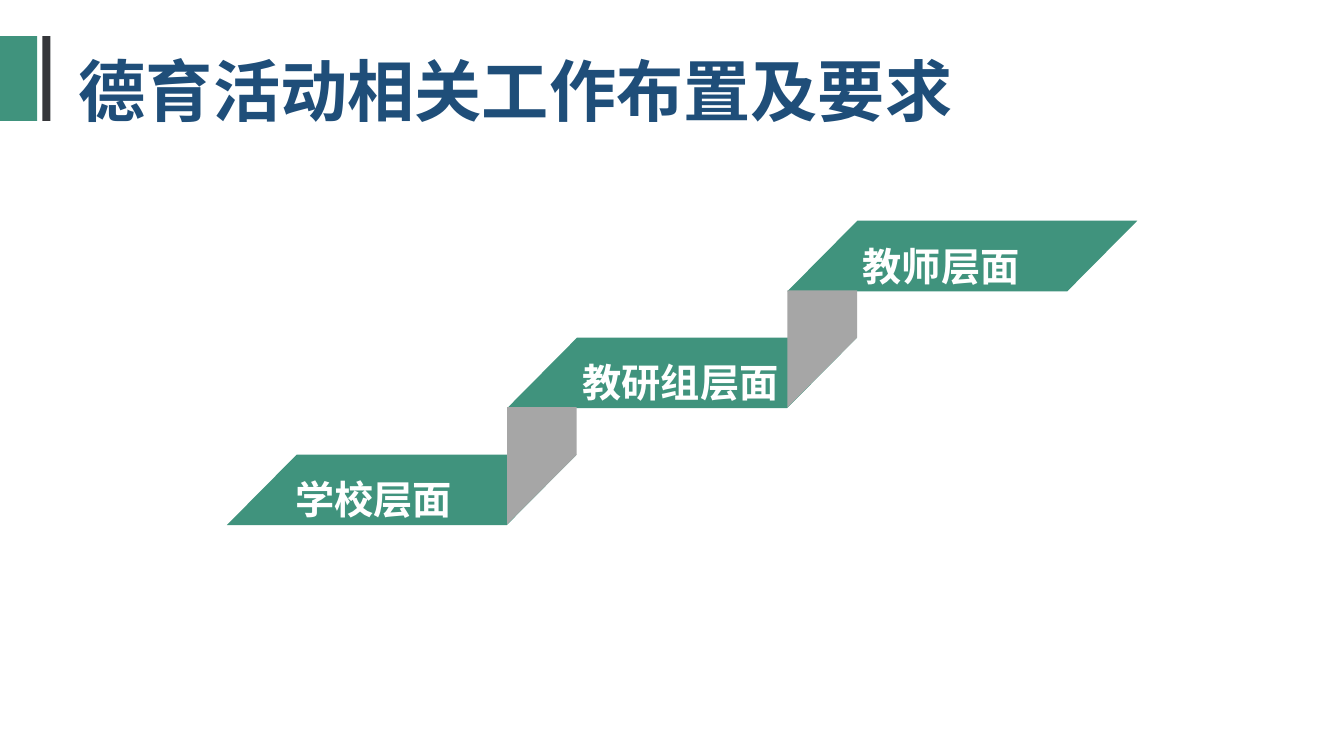
from dataclasses import dataclass

from lxml.etree import SubElement
from pptx import Presentation
from pptx.dml.color import RGBColor
from pptx.enum.shapes import MSO_SHAPE
from pptx.enum.text import MSO_ANCHOR, MSO_AUTO_SIZE, PP_ALIGN
from pptx.oxml.ns import qn
from pptx.util import Inches, Pt

FACE = "Noto Sans CJK SC"
GREEN, GREY, DARK, NAVY, WHITE = "40937D", "A6A6A6", "35363A", "1F4E79", "FFFFFF"
LEFT, TOP = 2.25, 4.51
RUN, RISE = 2.78, 1.16
WIDE, HIGH, SLANT = 3.47, 0.7, 0.69


@dataclass
class Step:
    text: str
    inset: float
    width: float


@dataclass
class Bar:
    left: float
    width: float
    color: str


STEPS = [
    Step("学校层面", 0.58, 1.76),
    Step("教研组层面", 0.65, 2.14),
    Step("教师层面", 0.65, 1.76),
]
BARS = [Bar(0, 0.37, GREEN), Bar(0.42, 0.08, DARK)]


def paint(shape, color: str) -> None:
    shape.shadow.inherit = False
    shape.fill.solid()
    shape.fill.fore_color.rgb = RGBColor.from_string(color)
    shape.line.fill.background()


def block(slide, kind: MSO_SHAPE, box: tuple, color: str) -> None:
    paint(slide.shapes.add_shape(kind, *map(Inches, box)), color)


def riser(slide, left: float, top: float) -> None:
    low = top + RISE
    points = [(left, top), (left + SLANT, top), (left + SLANT, low - SLANT)]
    form = slide.shapes.build_freeform(Inches(left), Inches(low), scale=1.0)
    form.add_line_segments([(Inches(x), Inches(y)) for x, y in points], close=True)
    paint(form.convert_to_shape(), GREY)


def write(shape, text: str, size: int, color: str) -> None:
    frame = shape.text_frame
    frame.text = text
    layout = {
        "word_wrap": False,
        "auto_size": MSO_AUTO_SIZE.SHAPE_TO_FIT_TEXT,
        "vertical_anchor": MSO_ANCHOR.TOP,
    }
    for name, value in layout.items():
        setattr(frame, name, value)
    line = frame.paragraphs[0]
    line.alignment = PP_ALIGN.LEFT
    run = line.runs[0]
    for name, value in {"name": FACE, "size": Pt(size), "bold": True}.items():
        setattr(run.font, name, value)
    run.font.color.rgb = RGBColor.from_string(color)
    SubElement(run._r.get_or_add_rPr(), qn("a:ea"), typeface=FACE)


def main() -> None:
    deck = Presentation()
    deck.slide_width, deck.slide_height = Inches(13.33), Inches(7.5)
    slide = deck.slides.add_slide(deck.slide_layouts[5])

    title = slide.shapes.title
    place = {"left": 0.68, "top": 0.44, "width": 8.87, "height": 0.91}
    for name, value in place.items():
        setattr(title, name, Inches(value))
    write(title, "德育活动相关工作布置及要求", 48, NAVY)

    for bar in BARS:
        block(slide, MSO_SHAPE.RECTANGLE, (bar.left, 0.36, bar.width, 0.84), bar.color)

    spots = [(LEFT + i * RUN, TOP - i * RISE) for i in range(len(STEPS))]
    for left, top in spots:
        block(slide, MSO_SHAPE.FLOWCHART_DATA, (left, top, WIDE, HIGH), GREEN)
    for left, top in spots[1:]:
        riser(slide, left, top + SLANT)
    for step, (left, top) in zip(STEPS, spots):
        box = (left + step.inset, top + 0.16, step.width, 0.57)
        write(slide.shapes.add_textbox(*map(Inches, box)), step.text, 28, WHITE)

    deck.save("out.pptx")


if __name__ == "__main__":
    main()
